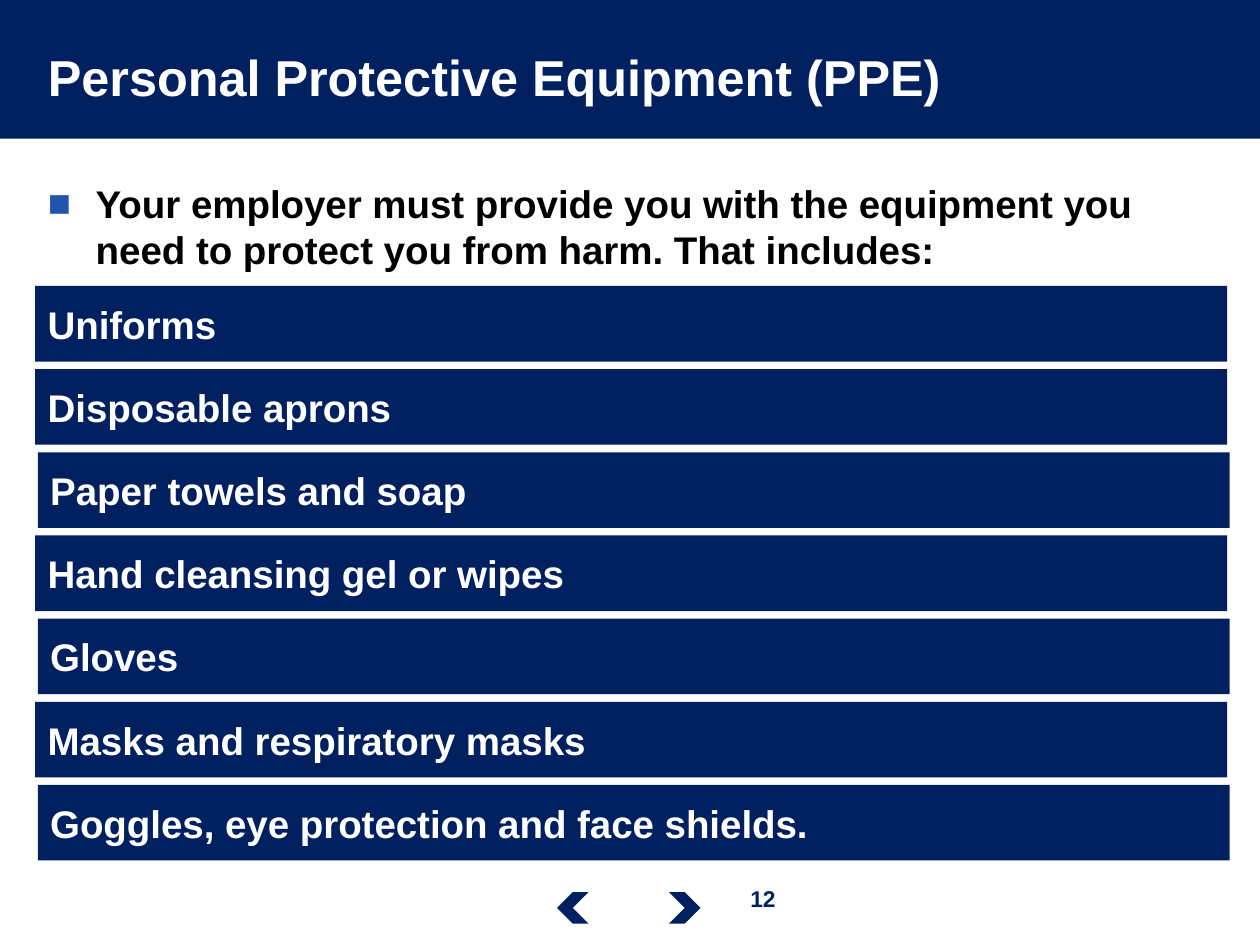
from lxml import etree
from pptx import Presentation
from pptx.dml.color import RGBColor
from pptx.enum import shapes, text
from pptx.oxml import ns
from pptx.util import Inches, Pt

NAVY = RGBColor(0x00, 0x20, 0x60)
BLUE = RGBColor(0x21, 0x54, 0xAC)
WHITE = RGBColor(0xFF, 0xFF, 0xFF)
BLACK = RGBColor(0x00, 0x00, 0x00)

EQUIPMENT = [
    ("Uniforms", 0.28),
    ("Disposable aprons", 0.28),
    ("Paper towels and soap", 0.3),
    ("Hand cleansing gel or wipes", 0.28),
    ("Gloves", 0.3),
    ("Masks and respiratory masks", 0.28),
    ("Goggles, eye protection and face shields.", 0.3),
]
FIRST_TOP, PITCH = 2.27, 0.66


def place(item, left, top, width, height):
    """Move and size a placeholder."""
    bounds = {"left": left, "top": top, "width": width, "height": height}
    for name, value in bounds.items():
        setattr(item, name, Inches(value))


def add_bullet(paragraph, mark, color, indent):
    """Give a paragraph a coloured bullet with a hanging indent."""
    properties = paragraph._p.get_or_add_pPr()
    properties.set("marL", str(Inches(indent)))
    properties.set("indent", str(-Inches(indent)))
    bullet_color = etree.SubElement(properties, ns.qn("a:buClr"))
    etree.SubElement(bullet_color, ns.qn("a:srgbClr"), val=str(color))
    etree.SubElement(properties, ns.qn("a:buFont"), typeface="Arial")
    etree.SubElement(properties, ns.qn("a:buChar"), char=mark)


def write(item, words, size, color, align=text.PP_ALIGN.LEFT,
          anchor=text.MSO_ANCHOR.MIDDLE, bullet=None):
    """Fill a shape with one bold paragraph."""
    frame = item.text_frame
    layout = {"word_wrap": True, "auto_size": text.MSO_AUTO_SIZE.NONE,
              "vertical_anchor": anchor}
    for name, value in layout.items():
        setattr(frame, name, value)
    paragraph = frame.paragraphs[0]
    paragraph.text = words
    paragraph.alignment = align
    paragraph.space_before = Pt(0)
    if bullet:
        add_bullet(paragraph, bullet, BLUE, 0.38)
    font = paragraph.runs[0].font
    for name, value in {"name": "Arial", "size": Pt(size), "bold": True}.items():
        setattr(font, name, value)
    font.color.rgb = color


def add_block(slide, kind, left, top, width, height, rotation=0):
    """Add a plain navy shape."""
    block = slide.shapes.add_shape(
        kind, Inches(left), Inches(top), Inches(width), Inches(height))
    block.shadow.inherit = False
    block.fill.solid()
    block.fill.fore_color.rgb = NAVY
    block.line.fill.background()
    block.rotation = rotation
    return block


def add_header(slide):
    """Add the title on its navy band."""
    band = add_block(slide, shapes.MSO_SHAPE.RECTANGLE, -0.02, 0, 10.02, 1.1)
    slide.shapes._spTree.insert(2, band._element)
    title = slide.shapes.title
    place(title, 0.28, 0.1, 7.9, 1.01)
    write(title, "Personal Protective Equipment (PPE)", 28.8, WHITE)


def add_intro(slide):
    """Fill the body placeholder with the lead sentence."""
    intro = slide.placeholders[1]
    place(intro, 0.28, 1.38, 9, 4.95)
    write(intro, "Your employer must provide you with the equipment you need "
          "to protect you from harm. That includes:", 22, BLACK,
          anchor=text.MSO_ANCHOR.TOP, bullet="■")


def add_equipment(slide):
    """Stack one bar for each piece of equipment."""
    for row, (words, left) in enumerate(EQUIPMENT):
        bar = add_block(slide, shapes.MSO_SHAPE.RECTANGLE,
                        left, FIRST_TOP + row * PITCH, 9.46, 0.6)
        write(bar, words, 22, WHITE)


def add_navigation(slide):
    """Add the back and forward chevrons and the page number."""
    for left, rotation in ((4.42, 180), (5.31, 0)):
        add_block(slide, shapes.MSO_SHAPE.CHEVRON, left, 7.08, 0.25, 0.25, rotation)
    page = slide.shapes.add_textbox(
        Inches(5.7), Inches(6.97), Inches(0.71), Inches(0.32))
    write(page, "12", 13, NAVY, text.PP_ALIGN.CENTER, text.MSO_ANCHOR.TOP)


def main():
    """Build and save the slide."""
    deck = Presentation()
    deck.slide_width, deck.slide_height = Inches(10), Inches(7.5)
    slide = deck.slides.add_slide(deck.slide_layouts[1])
    add_header(slide)
    add_intro(slide)
    add_equipment(slide)
    add_navigation(slide)
    deck.save("out.pptx")


if __name__ == "__main__":
    main()
